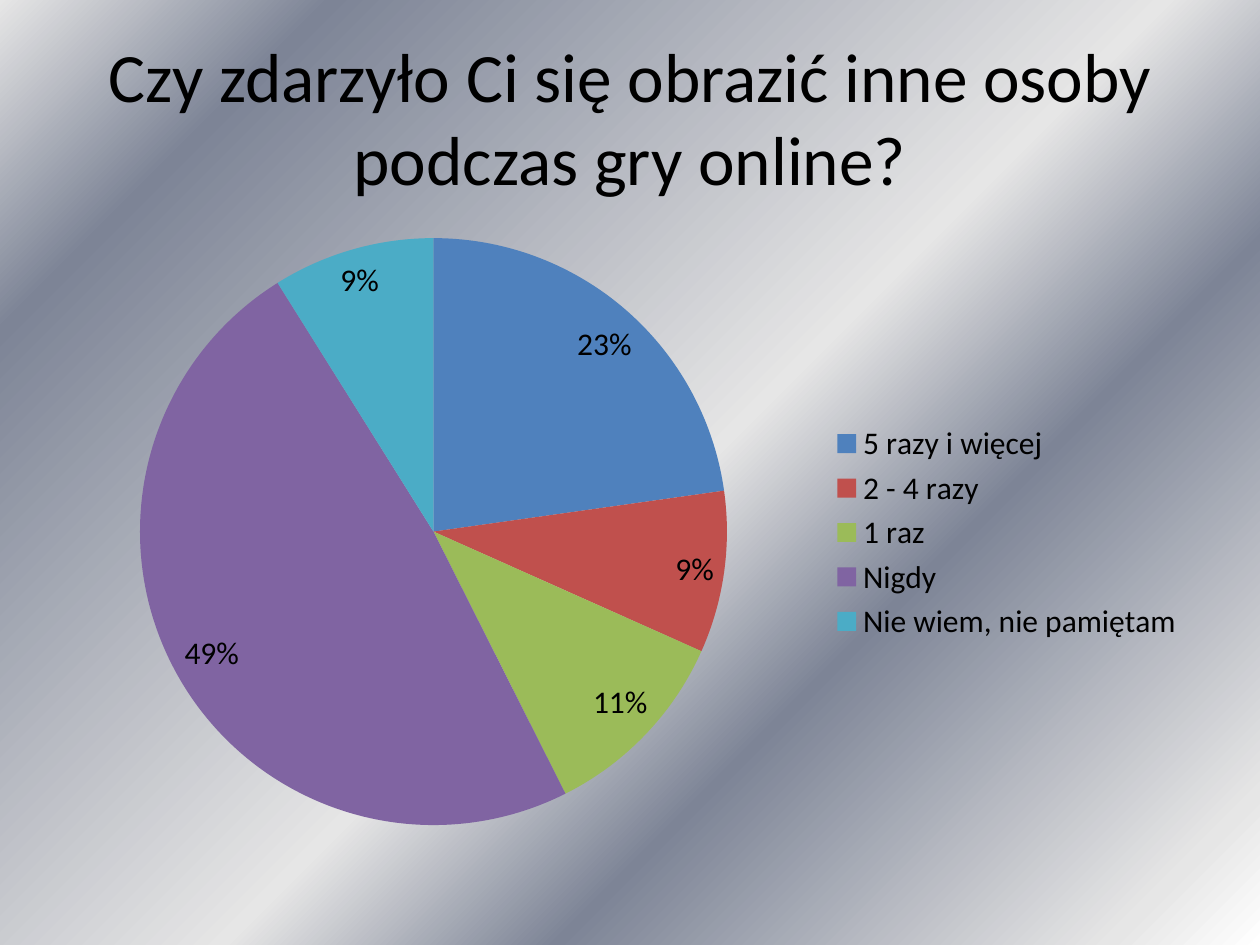
from lxml.etree import SubElement
from pptx import Presentation
from pptx.chart.data import CategoryChartData
from pptx.dml.color import RGBColor
from pptx.enum.chart import XL_CHART_TYPE, XL_LABEL_POSITION, XL_LEGEND_POSITION
from pptx.enum.text import MSO_ANCHOR, MSO_AUTO_SIZE, PP_ALIGN
from pptx.oxml.ns import qn
from pptx.util import Cm, Pt

FONT = "Calibri"
BLACK = RGBColor(0x00, 0x00, 0x00)
WHITE = RGBColor(0xFF, 0xFF, 0xFF)
SILVER = RGBColor(0xE6, 0xE6, 0xE6)
STEEL = RGBColor(0x7D, 0x84, 0x96)
BLUE = RGBColor(0x4F, 0x81, 0xBD)
RED = RGBColor(0xC0, 0x50, 0x4D)
GREEN = RGBColor(0x9B, 0xBB, 0x59)
PURPLE = RGBColor(0x80, 0x64, 0xA2)
TEAL = RGBColor(0x4B, 0xAC, 0xC6)

MARGIN = Cm(1.27)
CONTENT_WIDTH = Cm(22.86)
METAL = [(0, WHITE), (7, SILVER), (32, STEEL), (47, SILVER), (85, STEEL), (100, SILVER)]
ANSWERS = [
    ("5 razy i więcej", 0.23, BLUE),
    ("2 - 4 razy", 0.09, RED),
    ("1 raz", 0.11, GREEN),
    ("Nigdy", 0.49, PURPLE),
    ("Nie wiem, nie pamiętam", 0.09, TEAL),
]


def style_font(font, size, color=BLACK):
    """Set the typeface, size and colour of a font."""
    font.name = FONT
    font.size = Pt(size)
    font.color.rgb = color


def write_text(box, text, size=18, color=BLACK, align=PP_ALIGN.LEFT, anchor=MSO_ANCHOR.TOP):
    """Write one formatted paragraph into a shape."""
    frame = box.text_frame
    frame.word_wrap = True
    frame.auto_size = MSO_AUTO_SIZE.NONE
    frame.vertical_anchor = anchor
    para = frame.paragraphs[0]
    para.alignment = align
    span = para.add_run()
    span.text = text
    style_font(span.font, size, color)


def paint_background(page, stops, angle):
    """Fill the page with a linear gradient of several stops."""
    fill = page.background.fill
    fill.gradient()
    fill.gradient_angle = angle
    stop_list = next(page.element.iter(qn("a:gsLst")))
    for old_stop in list(stop_list):
        stop_list.remove(old_stop)
    for percent, color in stops:
        stop = SubElement(stop_list, qn("a:gs"), pos=str(percent * 1000))
        SubElement(stop, qn("a:srgbClr"), val=str(color))


def add_title(page, text):
    """Place and fill the title placeholder."""
    title = page.shapes.title
    title.left, title.top = MARGIN, Cm(0.76)
    title.width, title.height = CONTENT_WIDTH, Cm(3.18)
    write_text(title, text, size=39.6, align=PP_ALIGN.CENTER, anchor=MSO_ANCHOR.MIDDLE)


def add_answer_pie(page, answers):
    """Add a pie chart with percentage labels and a legend."""
    names, shares, colors = zip(*answers)
    data = CategoryChartData(number_format="0%")
    data.categories = names
    data.add_series("Series 1", shares)
    chart = page.shapes.add_chart(
        XL_CHART_TYPE.PIE, MARGIN, Cm(4.45), CONTENT_WIDTH, Cm(12.57), data
    ).chart
    style_font(chart.font, 18)
    chart.has_title = False
    chart.has_legend = True
    chart.legend.position = XL_LEGEND_POSITION.RIGHT
    chart.legend.include_in_layout = False

    plot = chart.plots[0]
    plot.vary_by_categories = True
    for index, color in enumerate(colors):
        fill = plot.series[0].points[index].format.fill
        fill.solid()
        fill.fore_color.rgb = color
    plot.has_data_labels = True
    labels = plot.data_labels
    labels.show_value = True
    labels.show_percentage = False
    labels.number_format = "0%"
    labels.number_format_is_linked = False
    labels.position = XL_LABEL_POSITION.BEST_FIT
    style_font(labels.font, 18)


def main():
    """Build the survey slide and save the deck."""
    deck = Presentation()
    deck.slide_width, deck.slide_height = Cm(25.4), Cm(19.05)
    page = deck.slides.add_slide(deck.slide_layouts[5])
    paint_background(page, METAL, angle=135)
    add_title(page, "Czy zdarzyło Ci się obrazić inne osoby podczas gry online?")
    add_answer_pie(page, ANSWERS)
    deck.save("out.pptx")


if __name__ == "__main__":
    main()
